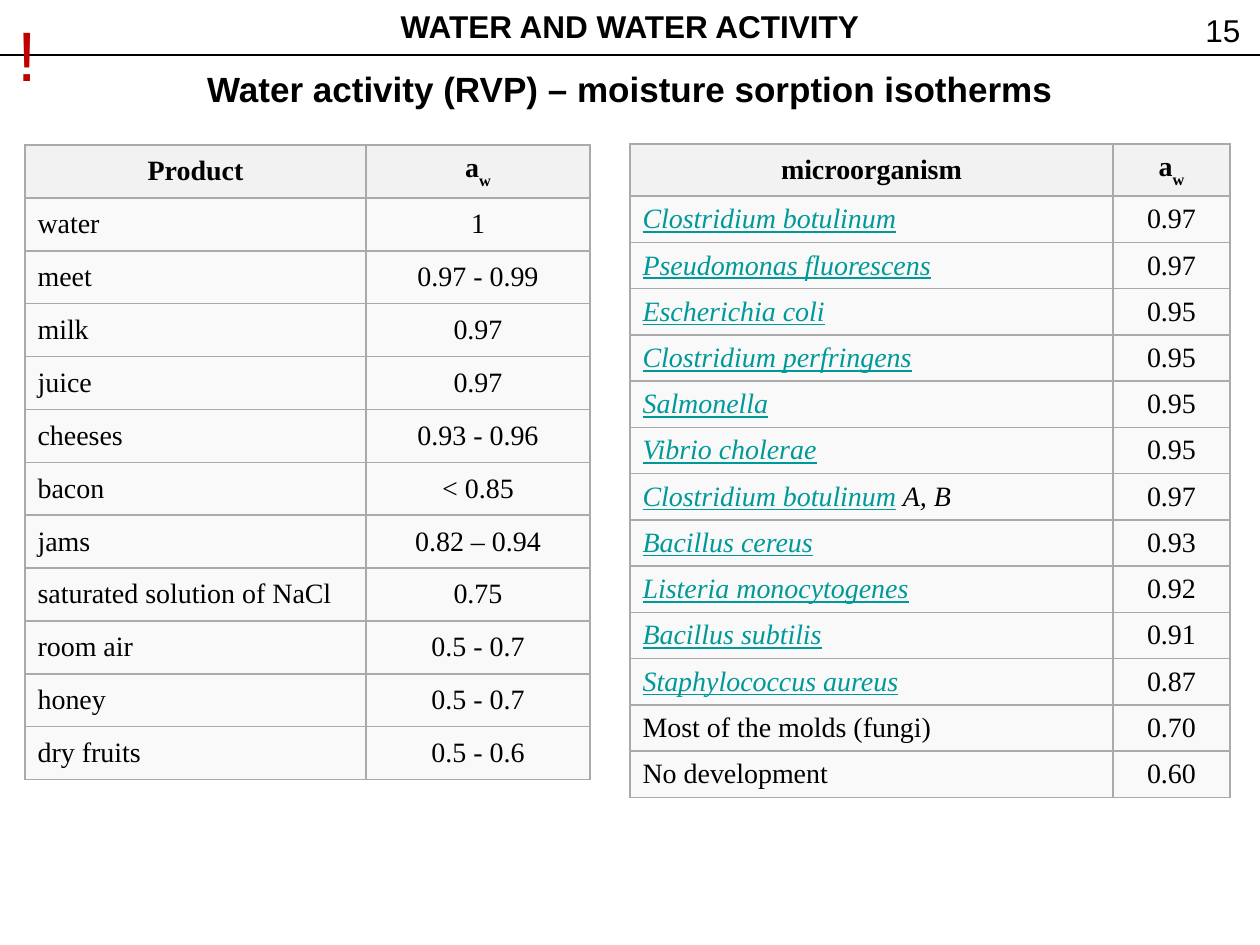
from dataclasses import dataclass

from pptx import Presentation
from pptx.dml.color import RGBColor
from pptx.enum.shapes import MSO_CONNECTOR as Connector
from pptx.enum.text import MSO_ANCHOR as Anchor, MSO_AUTO_SIZE as AutoSize, PP_ALIGN as Align
from pptx.oxml.ns import qn
from pptx.util import Emu, Pt
from lxml.etree import SubElement

PX_PER_INCH = 126
COLORS = {
    "black": "000000",
    "red": "C00000",
    "teal": "009999",
    "border": "AAAAAA",
    "header": "F2F2F2",
    "body": "F9F9F9",
}


@dataclass(frozen=True)
class Run:
    text: str
    color: str = "black"
    italic: bool = False
    underline: bool = False
    subscript: bool = False


@dataclass(frozen=True)
class TableSpec:
    left: int
    top: int
    height: int
    widths: tuple[int, int]
    rows: list[tuple[list[Run], list[Run]]]


def px(length: int) -> Emu:
    return Emu(round(length * 914400 / PX_PER_INCH))


def rgb(name: str) -> RGBColor:
    return RGBColor.from_string(COLORS[name])


def plain(text: str) -> list[Run]:
    return [Run(text)]


def species(name: str, suffix: str = "") -> list[Run]:
    runs = [Run(name, "teal", italic=True, underline=True)]
    return runs + [Run(suffix, italic=True)] if suffix else runs


def write(frame, runs: list[Run], *, size: int, font: str = "Arial", bold: bool = False,
          align: Align = Align.LEFT) -> None:
    paragraph = frame.paragraphs[0]
    paragraph.alignment = align
    for item in runs:
        run = paragraph.add_run()
        run.text = item.text
        run.font.name = font
        run.font.size = Pt(size)
        run.font.bold = bold
        run.font.italic = item.italic
        run.font.underline = item.underline
        run.font.color.rgb = rgb(item.color)
        if item.subscript:
            run._r.get_or_add_rPr().set("baseline", "-30000")


def place(shape, left: int, top: int, width: int, height: int, anchor: Anchor) -> None:
    shape.left, shape.top, shape.width, shape.height = map(px, (left, top, width, height))
    frame = shape.text_frame
    frame.word_wrap = False
    frame.auto_size = AutoSize.SHAPE_TO_FIT_TEXT
    frame.vertical_anchor = anchor


def add_label(slide, text: str, left: int, top: int, width: int, height: int,
              anchor: Anchor = Anchor.TOP, **text_format) -> None:
    shape = slide.shapes.add_textbox(0, 0, 0, 0)
    place(shape, left, top, width, height, anchor)
    write(shape.text_frame, plain(text), **text_format)


def format_cell(cell, fill: str) -> None:
    properties = cell._tc.get_or_add_tcPr()
    for side in ("lnL", "lnR", "lnT", "lnB"):
        border = SubElement(properties, qn(f"a:{side}"), w=str(Pt(1)))
        solid = SubElement(border, qn("a:solidFill"))
        SubElement(solid, qn("a:srgbClr"), val=COLORS["border"])
    cell.fill.solid()
    cell.fill.fore_color.rgb = rgb(fill)
    cell.vertical_anchor = Anchor.MIDDLE


def add_activity_table(slide, spec: TableSpec) -> None:
    table = slide.shapes.add_table(
        len(spec.rows), len(spec.widths), px(spec.left), px(spec.top),
        px(sum(spec.widths)), px(spec.height)).table
    for column, width in zip(table.columns, spec.widths):
        column.width = px(width)
    for row_index, row in enumerate(spec.rows):
        is_header = row_index == 0
        for column_index, runs in enumerate(row):
            cell = table.cell(row_index, column_index)
            format_cell(cell, "header" if is_header else "body")
            centered = is_header or column_index == 1
            write(cell.text_frame, runs, size=16, font="Times New Roman", bold=is_header,
                  align=Align.CENTER if centered else Align.LEFT)


ACTIVITY = [Run("a"), Run("w", subscript=True)]
PRODUCTS = [
    ("water", "1"),
    ("meet", "0.97 - 0.99"),
    ("milk", "0.97"),
    ("juice", "0.97"),
    ("cheeses", "0.93 - 0.96"),
    ("bacon", "< 0.85"),
    ("jams", "0.82 – 0.94"),
    ("saturated solution of NaCl", "0.75"),
    ("room air", "0.5 - 0.7"),
    ("honey", "0.5 - 0.7"),
    ("dry fruits", "0.5 - 0.6"),
]
MICROORGANISMS = [
    (species("Clostridium botulinum"), "0.97"),
    (species("Pseudomonas fluorescens"), "0.97"),
    (species("Escherichia coli"), "0.95"),
    (species("Clostridium perfringens"), "0.95"),
    (species("Salmonella"), "0.95"),
    (species("Vibrio cholerae"), "0.95"),
    (species("Clostridium botulinum", " A, B"), "0.97"),
    (species("Bacillus cereus"), "0.93"),
    (species("Listeria monocytogenes"), "0.92"),
    (species("Bacillus subtilis"), "0.91"),
    (species("Staphylococcus aureus"), "0.87"),
    (plain("Most of the molds (fungi)"), "0.70"),
    (plain("No development"), "0.60"),
]
TABLES = [
    TableSpec(25, 145, 635, (341, 224),
              [(plain("Product"), ACTIVITY)]
              + [(plain(name), plain(value)) for name, value in PRODUCTS]),
    TableSpec(630, 144, 647, (483, 117),
              [(plain("microorganism"), ACTIVITY)]
              + [(runs, plain(value)) for runs, value in MICROORGANISMS]),
]


def main() -> None:
    presentation = Presentation()
    presentation.slide_width, presentation.slide_height = px(1260), px(945)
    slide = presentation.slides.add_slide(presentation.slide_layouts[5])

    rule = slide.shapes.add_connector(Connector.STRAIGHT, 0, px(55), px(1260), px(55))
    rule.line.color.rgb = rgb("black")
    rule.line.width = Pt(0.75)
    SubElement(rule._element.spPr, qn("a:effectLst"))

    title = slide.shapes.title
    place(title, 386, 0, 488, 51, Anchor.MIDDLE)
    write(title.text_frame, plain("WATER AND WATER ACTIVITY"), size=18, bold=True,
          align=Align.CENTER)
    add_label(slide, "Water activity (RVP) – moisture sorption isotherms", 192, 61, 876, 55,
              Anchor.MIDDLE, size=20, bold=True, align=Align.CENTER)
    add_label(slide, "15", 1193, 5, 60, 51, size=18)

    for spec in TABLES:
        add_activity_table(slide, spec)

    exclamation = [Run("!", "red")]
    mark = slide.shapes.add_textbox(0, 0, 0, 0)
    place(mark, 5, 5, 45, 97, Anchor.TOP)
    write(mark.text_frame, exclamation, size=40)

    presentation.save("out.pptx")


if __name__ == "__main__":
    main()
